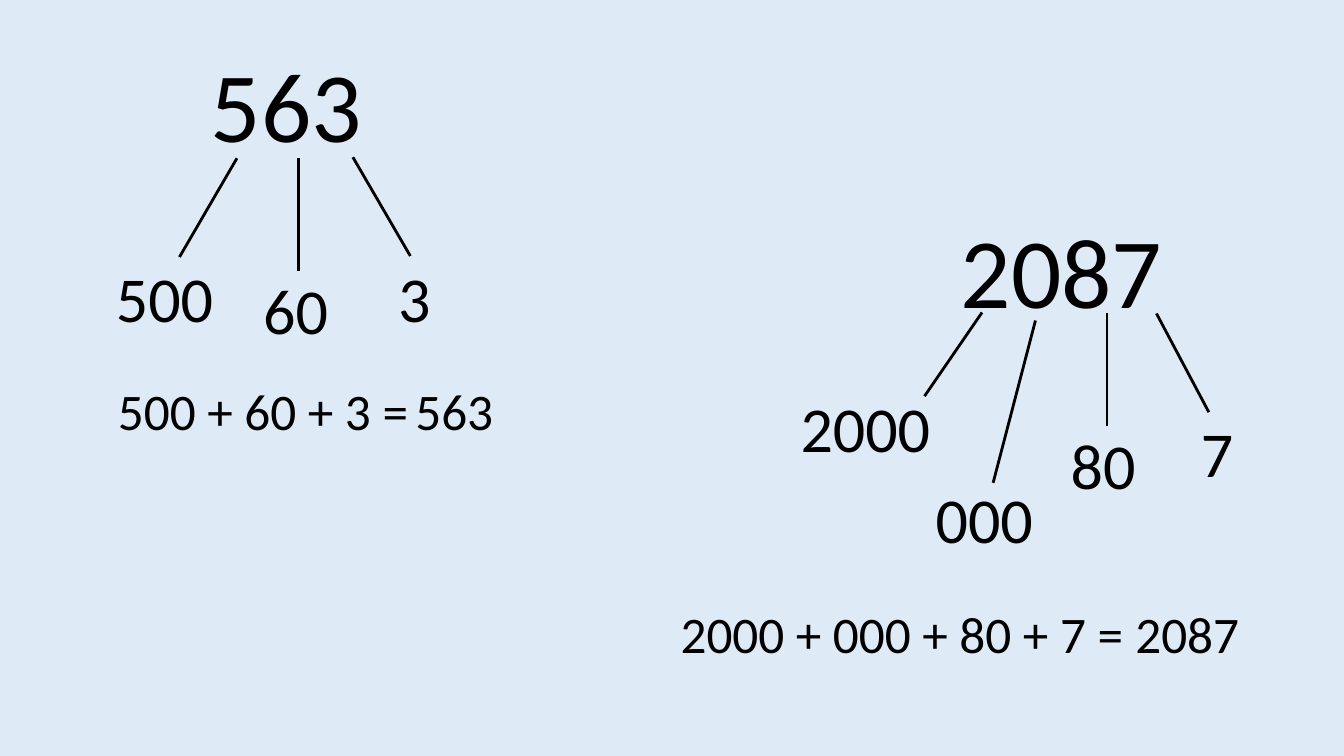
import pptx
import pptx.util
import pptx.dml.color
import pptx.enum.shapes
import pptx.enum.text
import pptx.oxml.xmlchemy
import lxml.etree

EMU_PER_PX = 9144  # 100 px to the inch
BLANK_LAYOUT = 6


def px(length):
    return pptx.util.Emu(length * EMU_PER_PX)


def colour(hex_string):
    return pptx.dml.color.RGBColor.from_string(hex_string)


class NumberSlide:
    """Place-value diagrams in one style on one slide."""

    FONT = "Calibri"
    INK = "000000"
    BACKGROUND = "DEEBF7"
    INSET = 4
    LINE_WIDTH = 2
    # role: (text size in points, box height in px)
    ROLES = {"number": (71, 127), "part": (45.7, 85), "sum": (36.6, 69)}

    def __init__(self, presentation):
        layout = presentation.slide_layouts[BLANK_LAYOUT]
        self.slide = presentation.slides.add_slide(layout)
        fill = self.slide.background.fill
        fill.solid()
        fill.fore_color.rgb = colour(self.BACKGROUND)

    def label(self, role, text, left, top, width):
        size, height = self.ROLES[role]
        box = self.slide.shapes.add_textbox(px(left), px(top), px(width), px(height))
        frame = box.text_frame
        frame.text = text
        frame.word_wrap = False
        frame.auto_size = pptx.enum.text.MSO_AUTO_SIZE.SHAPE_TO_FIT_TEXT
        frame.vertical_anchor = pptx.enum.text.MSO_ANCHOR.MIDDLE
        frame.margin_left = frame.margin_right = px(self.INSET)
        frame.margin_top = frame.margin_bottom = px(self.INSET)
        font = frame.paragraphs[0].runs[0].font
        font.name = self.FONT
        font.size = pptx.util.Pt(size)
        font.color.rgb = colour(self.INK)

    def branch(self, start, end):
        line = self.slide.shapes.add_connector(
            pptx.enum.shapes.MSO_CONNECTOR.STRAIGHT, *map(px, start + end))
        line.line.color.rgb = colour(self.INK)
        line.line.width = pptx.util.Pt(self.LINE_WIDTH)
        properties = line._element.spPr
        lxml.etree.SubElement(properties, pptx.oxml.ns.qn("a:effectLst"))

    def decomposition(self, number, parts, sum_labels):
        """Draw a number, a branch to each of its parts, and their sum."""
        self.label("number", *number)
        for part, start, end in parts:
            self.branch(start, end)
            self.label("part", *part)
        for sum_label in sum_labels:
            self.label("sum", *sum_label)


def main():
    presentation = pptx.Presentation()
    presentation.slide_width, presentation.slide_height = px(1333), px(750)
    slide = NumberSlide(presentation)

    # Three-digit number: labels are (text, left, top, width)
    slide.decomposition(
        number=("563", 205, 38, 159),
        parts=[
            (("500", 111, 252, 105), (178, 255), (235, 157)),
            (("60", 257, 264, 73), (296, 269), (296, 157)),
            (("3", 391, 252, 40), (407, 254), (350, 156)),
        ],
        sum_labels=[("500 + 60 + 3 =", 113, 372, 298), ("563", 408, 372, 86)],
    )

    # Four-digit number
    slide.decomposition(
        number=("2087", 949, 203, 210),
        parts=[
            (("2000", 790, 381, 138), (917, 393), (974, 310)),
            (("000", 924, 471, 105), (985, 479), (1027, 318)),
            (("80", 1058, 418, 73), (1098, 423), (1098, 311)),
            (("7", 1187, 406, 40), (1199, 409), (1147, 311)),
        ],
        sum_labels=[("2000 + 000 + 80 + 7 =", 671, 593, 451), ("2087", 1122, 593, 112)],
    )

    presentation.save("out.pptx")


if __name__ == "__main__":
    main()
